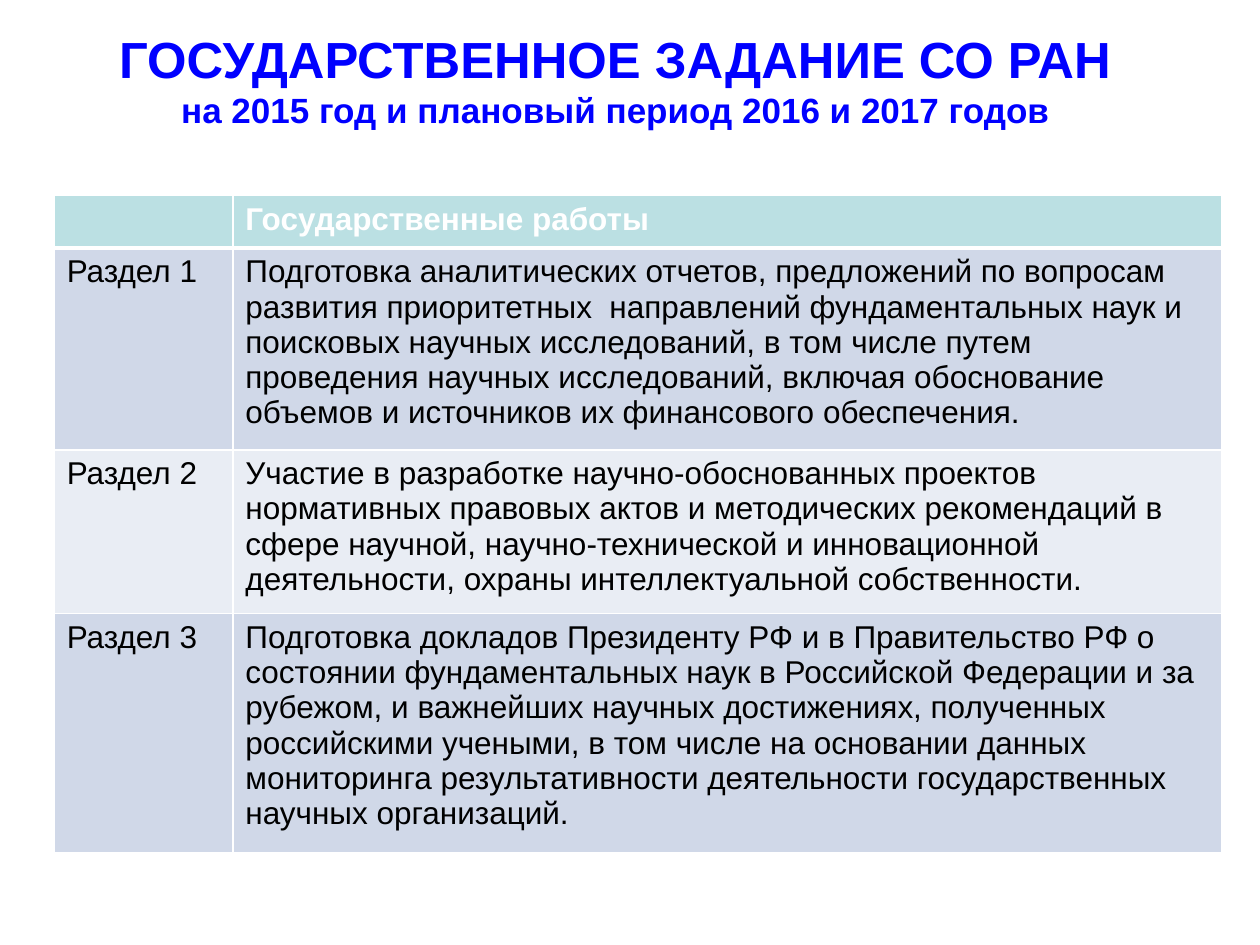
from lxml.etree import SubElement
from pptx import Presentation
from pptx.dml.color import RGBColor
from pptx.enum.text import MSO_ANCHOR, MSO_AUTO_SIZE, PP_ALIGN
from pptx.oxml.ns import qn
from pptx.util import Inches, Pt

FONT = "Arial"
ROWS = [
    ("", "Государственные работы"),
    ("Раздел 1", "Подготовка аналитических отчетов, предложений по вопросам развития "
     "приоритетных  направлений фундаментальных наук и поисковых научных исследований, "
     "в том числе путем проведения научных исследований, включая обоснование объемов и "
     "источников их финансового обеспечения."),
    ("Раздел 2", "Участие в разработке научно-обоснованных проектов нормативных правовых "
     "актов и методических рекомендаций в сфере научной, научно-технической и "
     "инновационной деятельности, охраны интеллектуальной собственности."),
    ("Раздел 3", "Подготовка докладов Президенту РФ и в Правительство РФ о состоянии "
     "фундаментальных наук в Российской Федерации и за рубежом, и важнейших научных "
     "достижениях, полученных российскими учеными, в том числе на основании данных "
     "мониторинга результативности деятельности государственных научных организаций."),
]
COL_SHARES = (0.153, 0.847)
ROW_SHARES = (0.08, 0.307, 0.249, 0.364)
FILLS = ("BBE0E3", "D0D8E8", "E9EDF4", "D0D8E8")


def color(value):
    return RGBColor.from_string(value)


def set_font(font, size, value, bold):
    font.name = FONT
    font.size = Pt(size)
    font.bold = bold
    font.color.rgb = color(value)


def set_borders(cell, widths):
    tc_pr = cell._tc.get_or_add_tcPr()
    for i, (side, width) in enumerate(widths.items()):
        ln = SubElement(tc_pr, qn(f"a:ln{side}"), w=str(Pt(width)))
        fill = SubElement(ln, qn("a:solidFill"))
        SubElement(fill, qn("a:srgbClr"), val="FFFFFF")
        tc_pr.remove(ln)
        tc_pr.insert(i, ln)


def place_title(s, box):
    sp = s.shapes.title
    sp.left, sp.top, sp.width, sp.height = box
    tf = sp.text_frame
    tf.word_wrap = True
    tf.auto_size = MSO_AUTO_SIZE.NONE
    tf.vertical_anchor = MSO_ANCHOR.MIDDLE
    p = tf.paragraphs[0]
    p.alignment = PP_ALIGN.CENTER
    set_font(p.font, 29, "0000FF", True)
    p.add_run().text = "ГОСУДАРСТВЕННОЕ ЗАДАНИЕ СО РАН"
    p.add_line_break()
    r = p.add_run()
    r.text = "на 2015 год и плановый период 2016 и 2017 годов"
    r.font.size = Pt(20)


def place_table(s, box):
    table = s.shapes.add_table(len(ROWS), len(COL_SHARES), *box).table
    for column, share in zip(table.columns, COL_SHARES):
        column.width = int(box[2] * share)
    for i, (row, share) in enumerate(zip(table.rows, ROW_SHARES)):
        row.height = int(box[3] * share)
        for cell, text in zip(row.cells, ROWS[i]):
            cell.fill.solid()
            cell.fill.fore_color.rgb = color(FILLS[i])
            set_borders(cell, {"L": 1, "R": 1, "T": 3 if i == 1 else 1, "B": 3 if i == 0 else 1})
            p = cell.text_frame.paragraphs[0]
            p.text = text
            set_font(p.font, 18, "000000" if i else "FFFFFF", i == 0)


def main():
    prs = Presentation()
    prs.slide_width, prs.slide_height = Inches(10), Inches(7.5)
    s = prs.slides.add_slide(prs.slide_layouts[5])
    place_table(s, [Inches(n) for n in (0.43, 1.55, 9.27, 5.22)])
    place_title(s, [Inches(n) for n in (0.12, 0.15, 9.53, 0.95)])
    prs.save("out.pptx")


if __name__ == "__main__":
    main()
